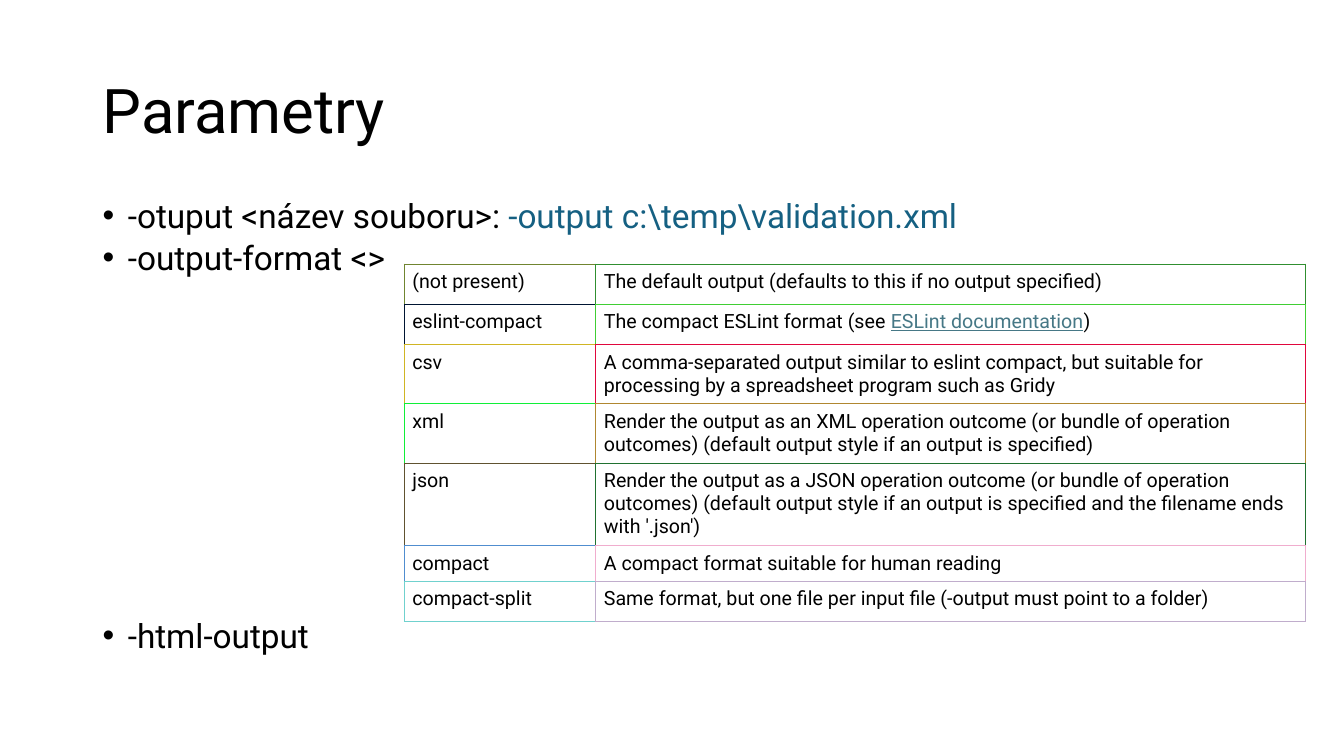
from lxml.etree import SubElement
from pptx import Presentation
from pptx.dml.color import RGBColor
from pptx.enum.text import MSO_ANCHOR as Anchor
from pptx.oxml.ns import qn
from pptx.util import Inches, Pt

COLORS = {"text": "000000", "paper": "FFFFFF", "command": "156082", "link": "467886"}
FONT = "Roboto"

BULLETS = [
    (0, [("-otuput <název souboru>: ", "text"),
         ("-output c:\\temp\\validation.xml", "command")]),
    (10, [("-output-format <>", "text")]),
    (250, [("-html-output", "text")]),
]

# Row height, then for each cell its border colour and its text spans
FORMATS = [
    (0.4, ("708530", ["(not present)"]),
     ("308F30", ["The default output (defaults to this if no output specified)"])),
    (0.4, ("001532", ["eslint-compact"]),
     ("40CE34", ["The compact ESLint format (see ", ("ESLint documentation", "link"), ")"])),
    (0.57, ("D0B523", ["csv"]),
     ("E0073D", ["A comma-separated output similar to eslint compact, but suitable for "
                 "processing by a spreadsheet program such as Gridy"])),
    (0.57, ("10EF38", ["xml"]),
     ("B08730", ["Render the output as an XML operation outcome (or bundle of operation "
                 "outcomes) (default output style if an output is specified)"])),
    (0.8, ("605230", ["json"]),
     ("207130", ["Render the output as a JSON operation outcome (or bundle of operation "
                 "outcomes) (default output style if an output is specified and the "
                 "filename ends with '.json')"])),
    (0.34, ("508DCF", ["compact"]),
     ("F0ADCE", ["A compact format suitable for human reading"])),
    (0.4, ("70D1CE", ["compact-split"]),
     ("C0ADCC", ["Same format, but one file per input file (-output must point to a folder)"])),
]


def add_span(para, text, size, color="text"):
    span = para.add_run()
    span.text = text
    values = {"name": FONT, "size": Pt(size), "underline": color == "link"}
    for name, value in values.items():
        setattr(span.font, name, value)
    span.font.color.rgb = RGBColor.from_string(COLORS[color])


def add_text_frame(page, box, anchor):
    frame = page.shapes.add_textbox(*map(Inches, box)).text_frame
    frame.word_wrap = True
    frame.vertical_anchor = anchor
    return frame


def add_title(page, box, text):
    para = add_text_frame(page, box, Anchor.MIDDLE).paragraphs[0]
    para.line_spacing = 0.9
    add_span(para, text, 44)


def add_bullets(page, box):
    frame = add_text_frame(page, box, Anchor.TOP)
    for index, (space, spans) in enumerate(BULLETS):
        para = frame.add_paragraph() if index else frame.paragraphs[0]
        para.line_spacing = 0.7
        para.space_before = Pt(space)
        props = para._p.get_or_add_pPr()
        props.set("marL", str(Inches(0.25)))
        props.set("indent", str(-Inches(0.25)))
        SubElement(props, qn("a:buFont"), typeface="Arial")
        SubElement(props, qn("a:buChar"), char="•")
        for text, color in spans:
            add_span(para, text, 23.8, color)


def add_borders(cell, row, col):
    """Draw the cell's edges; right and bottom take the neighbour's colour."""
    def color_at(r, c):
        inside = r < len(FORMATS) and c < 2
        return FORMATS[r][c + 1][0] if inside else FORMATS[row][col + 1][0]

    own = color_at(row, col)
    edges = {"L": own, "R": color_at(row, col + 1), "T": own, "B": color_at(row + 1, col)}
    props = cell._tc.get_or_add_tcPr()
    for side, color in edges.items():
        line = SubElement(props, qn(f"a:ln{side}"), w=str(Pt(0.75)))
        SubElement(SubElement(line, qn("a:solidFill")), qn("a:srgbClr"), val=color)


def add_format_table(page, box):
    table = page.shapes.add_table(len(FORMATS), 2, *map(Inches, box)).table
    table.first_row = table.horz_banding = False
    key_width = 1.9
    table.columns[0].width = Inches(key_width)
    table.columns[1].width = Inches(box[2] - key_width)
    margins = {"margin_left": 0.08, "margin_top": 0.06,
               "margin_right": 0.08, "margin_bottom": 0.06}
    for row, (height, *entries) in enumerate(FORMATS):
        table.rows[row].height = Inches(height)
        for col, (_, spans) in enumerate(entries):
            cell = table.cell(row, col)
            for name, value in margins.items():
                setattr(cell, name, Inches(value))
            add_borders(cell, row, col)
            cell.fill.solid()
            cell.fill.fore_color.rgb = RGBColor.from_string(COLORS["paper"])
            for span in spans:
                text, color = (span, "text") if isinstance(span, str) else span
                add_span(cell.text_frame.paragraphs[0], text, 14, color)


def main():
    deck = Presentation()
    deck.slide_width, deck.slide_height = Inches(13.33), Inches(7.5)
    page = deck.slides.add_slide(deck.slide_layouts[6])
    add_title(page, (0.92, 0.4, 11.5, 1.45), "Parametry")
    add_bullets(page, (0.92, 2, 11.5, 4.76))
    add_format_table(page, (4.01, 2.62, 8.94, 3.48))
    deck.save("out.pptx")


if __name__ == "__main__":
    main()
